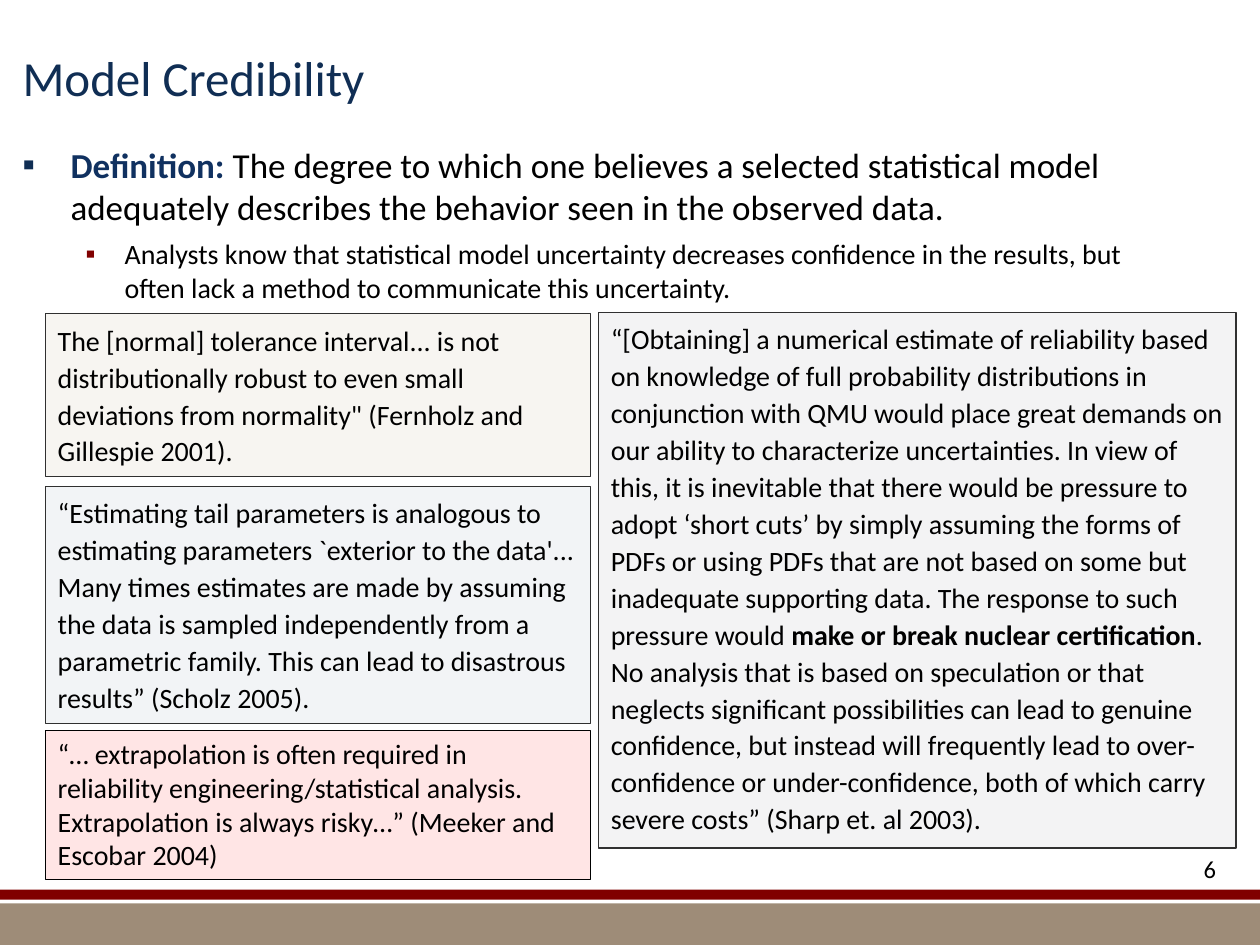
from lxml import etree
from pptx import Presentation
from pptx.dml import color
from pptx.enum import shapes, text
from pptx.oxml import ns
from pptx.util import Inches, Pt

NAVY, RED, TAN, BLACK, GREY = "102E54", "800000", "9E8C78", "000000", "303030"
LEFT, WIDE = 0.36, 4.33


def rgb(code):
    return color.RGBColor.from_string(code)


def node(parent, tag, **attrs):
    return etree.SubElement(parent, ns.qn("a:" + tag), attrs)


class Deck:
    font = "Calibri"

    def __init__(self, wide, high):
        self.prs = Presentation()
        self.prs.slide_width, self.prs.slide_height = Inches(wide), Inches(high)
        self.slide = self.prs.slides.add_slide(self.prs.slide_layouts[1])

    def place(self, shape, spot):
        for name, val in zip(("left", "top", "width", "height"), spot):
            setattr(shape, name, Inches(val))

    def frame(self, shape, anchor=text.MSO_ANCHOR.TOP):
        frame = shape.text_frame
        form = {"word_wrap": True, "auto_size": text.MSO_AUTO_SIZE.NONE,
                "vertical_anchor": anchor}
        for name, val in form.items():
            setattr(frame, name, val)
        return frame

    def words(self, para, runs, size, **form):
        """Add runs, each a (wording, bold, colour) tuple, and format the paragraph."""
        for name, val in ({"alignment": text.PP_ALIGN.LEFT} | form).items():
            setattr(para, name, val)
        for wording, bold, code in runs:
            run = para.add_run()
            run.text = wording
            style = {"name": self.font, "size": Pt(size), "bold": bold}
            for name, val in style.items():
                setattr(run.font, name, val)
            run.font.color.rgb = rgb(code)

    def title(self, wording, spot):
        shape = self.slide.shapes.title
        self.place(shape, spot)
        frame = self.frame(shape, text.MSO_ANCHOR.MIDDLE)
        self.words(frame.paragraphs[0], [(wording, False, NAVY)], 28)

    def bullets(self, items, spot):
        """Fill the body with (level, runs) items."""
        shape = self.slide.placeholders[1]
        self.place(shape, spot)
        frame = self.frame(shape)
        looks = [(20, 0.38, 0.38, NAVY), (16, 0.81, 0.31, RED)]
        for i, (level, runs) in enumerate(items):
            para = frame.add_paragraph() if i else frame.paragraphs[0]
            size, left, hang, code = looks[level]
            props = para._p.get_or_add_pPr()
            props.set("marL", str(Inches(left)))
            props.set("indent", str(-Inches(hang)))
            node(node(props, "buClr"), "srgbClr", val=code)
            node(props, "buFont", typeface=self.font)
            node(props, "buChar", char="▪")
            self.words(para, runs, size, level=level, space_after=Pt(2),
                       space_before=Pt(size * 0.2 if i else 0))

    def bar(self, spot, fill, alpha=100, line=None):
        shape = self.slide.shapes.add_shape(
            shapes.MSO_SHAPE.RECTANGLE, *map(Inches, spot))
        shape.shadow.inherit = False
        shape.fill.solid()
        shape.fill.fore_color.rgb = rgb(fill)
        if alpha < 100:
            tint = shape._element.spPr.find(".//" + ns.qn("a:srgbClr"))
            node(tint, "alpha", val=str(alpha * 1000))
        if line:
            shape.line.color.rgb = rgb(line)
            shape.line.width = Pt(0.75)
        else:
            shape.line.fill.background()
        return shape

    def quote(self, spot, runs, fill, alpha=100, line=GREY, pitch=1.1):
        frame = self.frame(self.bar(spot, fill, alpha, line))
        self.words(frame.paragraphs[0], runs, 16, line_spacing=pitch)

    def number(self, wording, spot):
        frame = self.frame(self.slide.shapes.add_textbox(*map(Inches, spot)))
        self.words(frame.paragraphs[0], [(wording, False, BLACK)], 14,
                   alignment=text.PP_ALIGN.RIGHT)


def plain(wording):
    return wording, False, BLACK


def main():
    deck = Deck(10, 7.5)
    deck.bar((0, 7.17, 10, 0.33), TAN)
    deck.bar((0, 7.06, 10, 0.08), RED)
    deck.title("Model Credibility", (0.08, 0.07, 9, 1.08))
    deck.bullets([
        (0, [("Definition: ", True, "103160"),
             plain("The degree to which one believes a selected statistical model "
                   "adequately describes the behavior seen in the observed data.")]),
        (1, [plain("Analysts know that statistical model uncertainty decreases "
                   "confidence in the results, but often lack a method to "
                   "communicate this uncertainty.")]),
    ], (0.08, 1.09, 9, 5.3))
    deck.number("6", (9.08, 6.73, 0.67, 0.41))

    deck.quote((LEFT, 2.49, WIDE, 1.29), [plain(
        "The [normal] tolerance interval... is not distributionally robust to even "
        "small deviations from normality\" (Fernholz and Gillespie 2001).")],
        "AC956E", 9)
    deck.quote((LEFT, 3.86, WIDE, 1.88), [plain(
        "“Estimating tail parameters is analogous to estimating parameters "
        "`exterior to the data'... Many times estimates are made by assuming the "
        "data is sampled independently from a parametric family. This can lead to "
        "disastrous results” (Scholz 2005).")], "103160", 5)
    deck.quote((4.75, 2.48, 5.06, 4.25), [
        plain("“[Obtaining] a numerical estimate of reliability based on knowledge "
              "of full probability distributions in conjunction with QMU would place "
              "great demands on our ability to characterize uncertainties. In view "
              "of this, it is inevitable that there would be pressure to adopt "
              "‘short cuts’ by simply assuming the forms of PDFs or using PDFs that "
              "are not based on some but inadequate supporting data. The response "
              "to such pressure would "),
        ("make or break nuclear certification", True, BLACK),
        plain(". No analysis that is based on speculation or that neglects "
              "significant possibilities can lead to genuine confidence, but instead "
              "will frequently lead to over-confidence or under-confidence, both of "
              "which carry severe costs” (Sharp et. al 2003)."),
    ], "DEDEE0", 34)
    deck.quote((LEFT, 5.8, WIDE, 1.18), [plain(
        "“… extrapolation is often required in reliability engineering/statistical "
        "analysis. Extrapolation is always risky…” (Meeker and Escobar 2004)")],
        "FFE5E5", line=BLACK, pitch=1.0)
    deck.prs.save("out.pptx")


if __name__ == "__main__":
    main()
